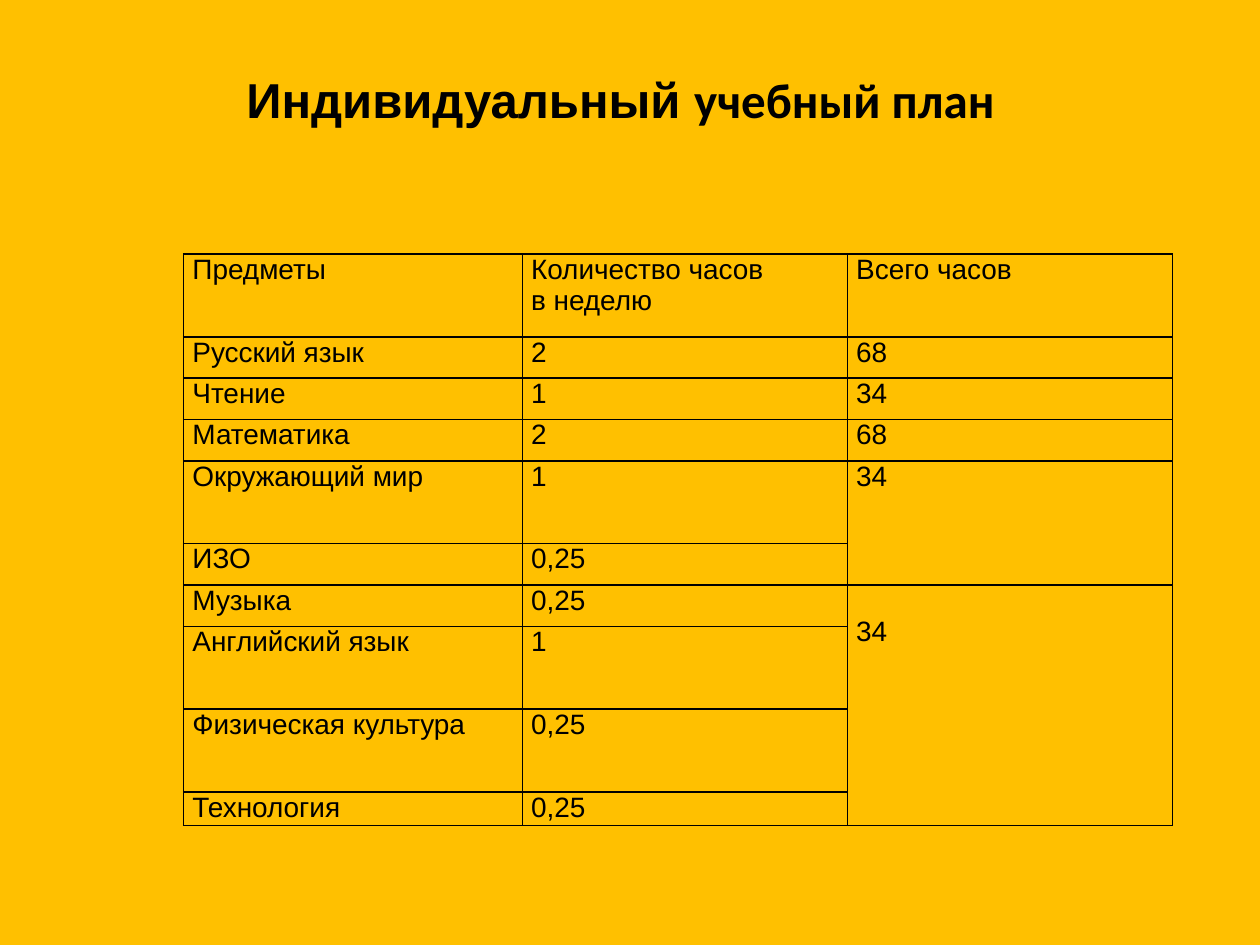
import dataclasses
import lxml.etree
import pptx
import pptx.dml.color
import pptx.enum.text
import pptx.oxml.ns
import pptx.table
import pptx.text.text
import pptx.util

Pt = pptx.util.Pt
Align = pptx.enum.text.PP_ALIGN
Anchor = pptx.enum.text.MSO_ANCHOR
BLACK = pptx.dml.color.RGBColor(0, 0, 0)
GOLD = pptx.dml.color.RGBColor(0xFF, 0xC0, 0x00)

LOW, TALL, LAST = 23.65, 47.3, 17.8
COLS = (193.5, 185.8, 185.8)


@dataclasses.dataclass
class Row:
    high: float
    name: str
    week: str
    total: str = ""
    span: int = 1
    drop: float = 0  # top inset of the total


ROWS = [
    Row(TALL, "Предметы", "Количество часов\nв неделю", "Всего часов"),
    Row(LOW, "Русский язык", "2", "68"),
    Row(LOW, "Чтение", "1", "34"),
    Row(LOW, "Математика", "2", "68"),
    Row(TALL, "Окружающий мир", "1", "34", span=2),
    Row(LOW, "ИЗО", "0,25"),
    Row(LOW, "Музыка", "0,25", "34", span=4, drop=18),
    Row(TALL, "Английский язык", "1"),
    Row(TALL, "Физическая культура", "0,25"),
    Row(LAST, "Технология", "0,25"),
]


def write(para: pptx.text.text._Paragraph, text: str, *, size: float,
          font: str = "Arial", bold: bool = False,
          align: Align = Align.JUSTIFY) -> None:
    para.alignment = align
    run = para.add_run()
    run.text = text
    run.font.size = Pt(size)
    run.font.name = font
    run.font.bold = bold
    run.font.color.rgb = BLACK


def frame(cell: pptx.table._Cell) -> None:
    """Give the cell thin black borders and no fill."""
    props = cell._tc.get_or_add_tcPr()
    for side in ("lnL", "lnR", "lnT", "lnB"):
        line = lxml.etree.SubElement(
            props, pptx.oxml.ns.qn(f"a:{side}"), w=str(Pt(1)))
        fill = lxml.etree.SubElement(line, pptx.oxml.ns.qn("a:solidFill"))
        lxml.etree.SubElement(
            fill, pptx.oxml.ns.qn("a:srgbClr"), val=str(BLACK))
    cell.fill.background()


def fill_cell(cell: pptx.table._Cell, text: str, drop: float = 0) -> None:
    frame(cell)
    cell.margin_left = cell.margin_right = Pt(5)
    cell.margin_top, cell.margin_bottom = Pt(drop), Pt(0)
    if not text:
        return
    body = cell.text_frame
    for i, part in enumerate(text.split("\n")):
        para = body.add_paragraph() if i else body.paragraphs[0]
        write(para, part, size=16)


def main() -> None:
    deck = pptx.Presentation()
    deck.slide_width, deck.slide_height = Pt(720), Pt(540)
    slide = deck.slides.add_slide(deck.slide_layouts[6])
    slide.background.fill.solid()
    slide.background.fill.fore_color.rgb = GOLD

    # Title, raised by its bottom inset
    box = slide.shapes.add_textbox(Pt(31), Pt(0), Pt(653), Pt(162))
    body = box.text_frame
    body.word_wrap = True
    body.vertical_anchor = Anchor.MIDDLE
    body.margin_bottom, body.margin_right = Pt(53), Pt(13)
    for text, font in (("Индивидуальный ", "Arial"),
                       ("учебный план", "Calibri")):
        write(body.paragraphs[0], text, size=28, font=font, bold=True,
              align=Align.CENTER)

    # Table of subjects and hours
    grid = slide.shapes.add_table(
        len(ROWS), len(COLS), Pt(105), Pt(145.2),
        Pt(sum(COLS)), Pt(sum(row.high for row in ROWS))).table
    grid.first_row = grid.horz_banding = False
    for col, wide in zip(grid.columns, COLS):
        col.width = Pt(wide)
    for i, row in enumerate(ROWS):
        grid.rows[i].height = Pt(row.high)
        fill_cell(grid.cell(i, 0), row.name)
        fill_cell(grid.cell(i, 1), row.week)
        fill_cell(grid.cell(i, 2), row.total, row.drop)

    # Totals shared by several rows
    for i, row in enumerate(ROWS):
        if row.span > 1:
            grid.cell(i, 2).merge(grid.cell(i + row.span - 1, 2))

    deck.save("out.pptx")


if __name__ == "__main__":
    main()
